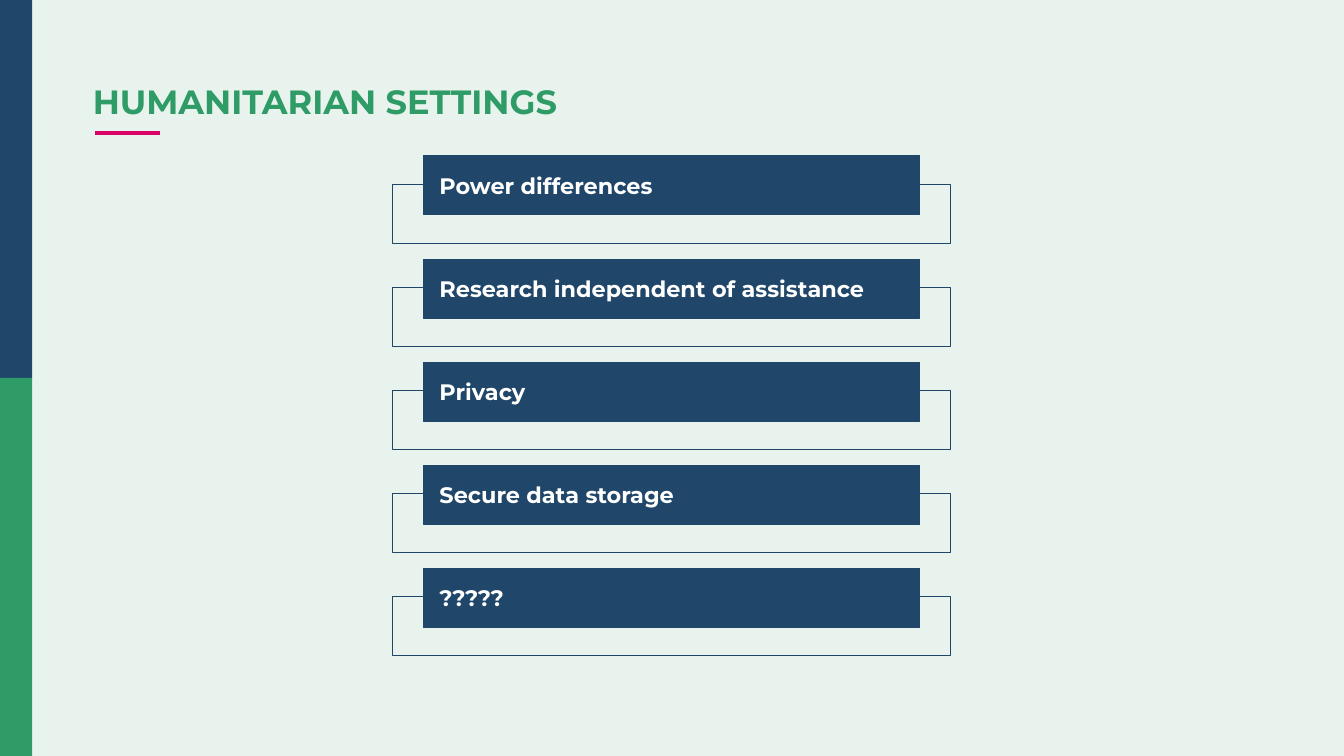
from pptx import Presentation
from pptx import util as u
from pptx.dml.color import RGBColor
from pptx.enum import shapes, text
from pptx.oxml import parse_xml
from pptx.oxml.ns import nsdecls

SLIDE_WIDTH = 10
SLIDE_HEIGHT = SLIDE_WIDTH * 9 / 16
COLORS = {
    "background": "E9F3ED",
    "green": "2F9C67",
    "navy": "204669",
    "pink": "D90368",
    "white": "FFFFFF",
}
FONT = "Montserrat"
TOPICS = [
    "Power differences",
    "Research independent of assistance",
    "Privacy",
    "Secure data storage",
    "?????",
]


def color(name):
    return RGBColor.from_string(COLORS[name])


def write(shape, content, size, fill, insets, anchor=text.MSO_ANCHOR.TOP, spacing=1.0):
    """Put one bold, left-aligned paragraph into a shape; insets are left, top, right, bottom."""
    frame = shape.text_frame
    frame.word_wrap = True
    frame.vertical_anchor = anchor
    frame.margin_left, frame.margin_top, frame.margin_right, frame.margin_bottom = map(
        u.Inches, insets
    )
    paragraph = frame.paragraphs[0]
    paragraph.alignment = text.PP_ALIGN.LEFT
    paragraph.line_spacing = spacing
    run = paragraph.add_run()
    run.text = content
    run.font.name = FONT
    run.font.size = u.Pt(size)
    run.font.bold = True
    run.font.color.rgb = color(fill)


def add_rectangle(parent, left, top, width, height, fill=None, line=None):
    """Add a rectangle to a slide or a group."""
    shape = parent.shapes.add_shape(
        shapes.MSO_SHAPE.RECTANGLE, *map(u.Inches, (left, top, width, height))
    )
    shape.shadow.inherit = False
    if fill:
        shape.fill.solid()
        shape.fill.fore_color.rgb = color(fill)
    else:
        shape.fill.background()
    if line:
        shape.line.color.rgb = color(line)
        shape.line.width = u.Pt(0.5)
    else:
        shape.line.fill.background()
    return shape


def add_title(slide, left, top, width, height, content):
    """Title with a short accent line beneath it."""
    line_left, line_top = left + 0.02, top + 0.4
    accent = slide.shapes.add_connector(
        shapes.MSO_CONNECTOR.STRAIGHT,
        *map(u.Inches, (line_left, line_top, line_left + 0.48, line_top)),
    )
    accent.line.color.rgb = color("pink")
    accent.line.width = u.Pt(2.25)
    accent._element.spPr.append(parse_xml(f"<a:effectLst {nsdecls('a')}/>"))
    box = slide.shapes.add_textbox(*map(u.Inches, (left, top, width, height)))
    write(box, content, 18, "green", (0, 0.05, 0.1, 0.05), spacing=0.9)


def add_side_band(slide, left, top, width, height):
    half = height / 2
    for index, fill in enumerate(("navy", "green")):
        add_rectangle(slide, left, top + index * half, width, half, fill)


def add_topic_list(slide, left, top, width, height, topics):
    """Evenly spaced filled labels, each overlapping a wider outlined box."""
    box_height, drop, label_inset = 0.44, 0.21, 0.23
    step = (height - box_height - drop) / (len(topics) - 1)
    for index, topic in enumerate(topics):
        label_top = top + index * step
        group = slide.shapes.add_group_shape()
        add_rectangle(group, left, label_top + drop, width, box_height, line="navy")
        label = add_rectangle(
            group, left + label_inset, label_top, width - 2 * label_inset, box_height,
            fill="navy", line="navy",
        )
        write(label, topic, 12, "white", (0.12, 0.12, 0.04, 0.12), text.MSO_ANCHOR.MIDDLE)


def main():
    presentation = Presentation()
    presentation.slide_width = u.Inches(SLIDE_WIDTH)
    presentation.slide_height = u.Inches(SLIDE_HEIGHT)
    slide = presentation.slides.add_slide(presentation.slide_layouts[6])
    slide.background.fill.solid()
    slide.background.fill.fore_color.rgb = color("background")

    add_title(slide, 0.69, 0.59, 8.62, 0.37, "HUMANITARIAN SETTINGS")
    add_side_band(slide, 0, 0, 0.24, SLIDE_HEIGHT)
    add_topic_list(slide, 2.92, 1.16, 4.15, 3.72, TOPICS)
    presentation.save("out.pptx")


if __name__ == "__main__":
    main()
